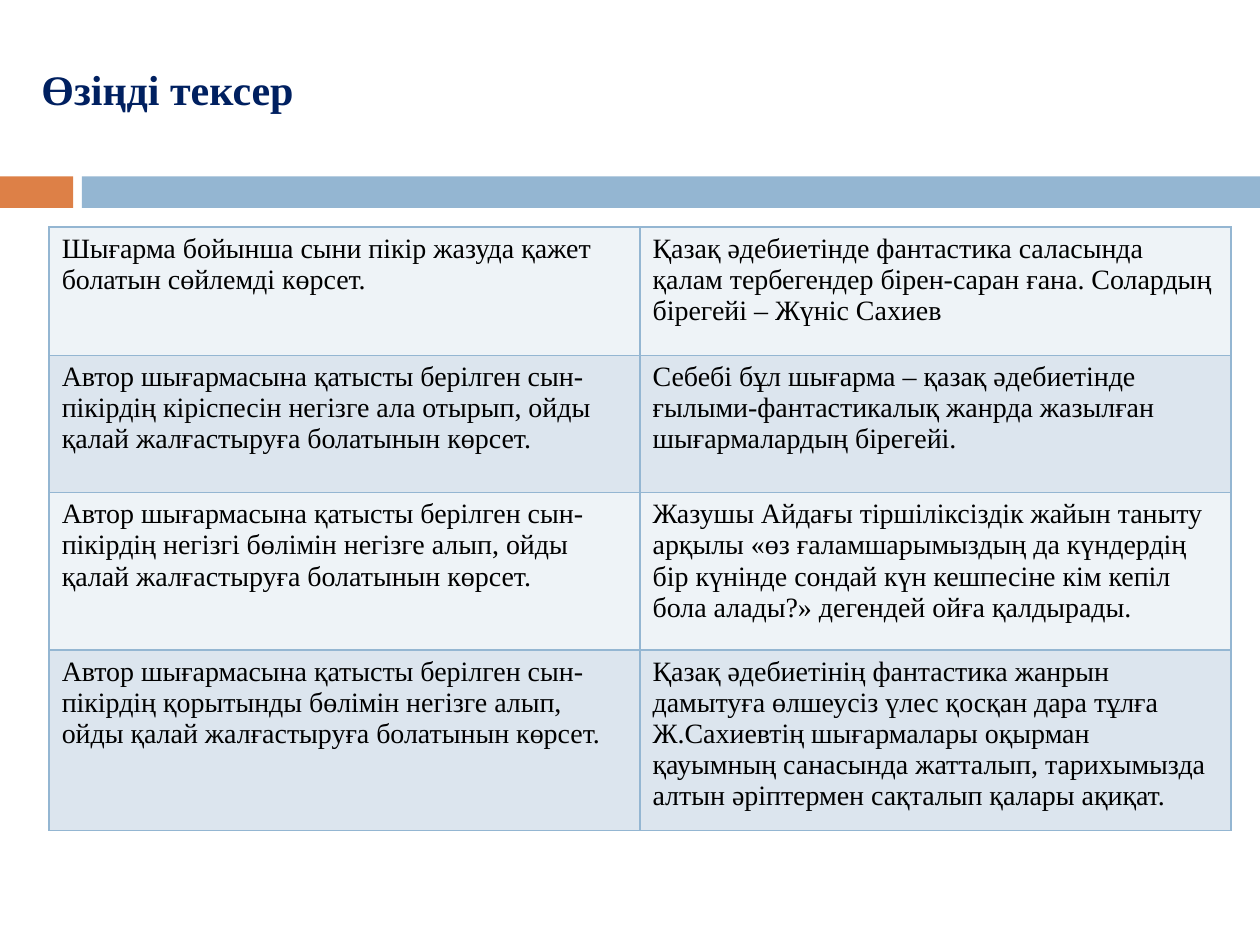
from dataclasses import dataclass

from lxml import etree
from pptx import Presentation
from pptx import util as u
from pptx.dml.color import RGBColor
from pptx.enum import shapes, text
from pptx.oxml import ns

FONT = "Times New Roman"
ACCENT = "94B6D2"
BAND_FILLS = ("EEF3F7", "DCE5EE")


@dataclass
class Bar:
    left: float
    width: float
    fill: str


@dataclass
class Answer:
    task: str
    reply: str
    height: float


BARS = [Bar(0, 0.58, "DD8047"), Bar(0.65, 9.35, ACCENT)]

ANSWERS = [
    Answer(
        "Шығарма бойынша сыни пікір жазуда қажет болатын сөйлемді көрсет.",
        "Қазақ әдебиетінде фантастика саласында қалам тербегендер бірен-саран ғана. "
        "Солардың бірегейі – Жүніс Сахиев",
        1.02,
    ),
    Answer(
        "Автор шығармасына қатысты берілген сын-пікірдің кіріспесін негізге ала отырып, "
        "ойды қалай жалғастыруға болатынын көрсет.",
        "Себебі бұл шығарма – қазақ әдебиетінде ғылыми-фантастикалық жанрда жазылған "
        "шығармалардың бірегейі.",
        1.09,
    ),
    Answer(
        "Автор шығармасына қатысты берілген сын-пікірдің негізгі бөлімін негізге алып, "
        "ойды қалай жалғастыруға болатынын көрсет.",
        "Жазушы Айдағы тіршіліксіздік жайын таныту арқылы «өз ғаламшарымыздың да "
        "күндердің бір күнінде сондай күн кешпесіне кім кепіл бола алады?» дегендей "
        "ойға қалдырады.",
        1.25,
    ),
    Answer(
        "Автор шығармасына қатысты берілген сын-пікірдің қорытынды бөлімін негізге алып, "
        "ойды қалай жалғастыруға болатынын көрсет.",
        "Қазақ әдебиетінің фантастика жанрын дамытуға өлшеусіз үлес қосқан дара тұлға "
        "Ж.Сахиевтің шығармалары оқырман қауымның санасында жатталып, тарихымызда алтын "
        "әріптермен сақталып қалары ақиқат.",
        1.25,
    ),
]


def paint(fill, color: str) -> None:
    fill.solid()
    fill.fore_color.rgb = RGBColor.from_string(color)


def style(paragraph, size: float, color: str, bold: bool = False) -> None:
    font = paragraph.font
    font.name, font.size, font.bold = FONT, u.Pt(size), bold
    paint(font.fill, color)


def draw_bar(slide, bar: Bar) -> None:
    strip = slide.shapes.add_shape(
        shapes.MSO_SHAPE.RECTANGLE,
        u.Inches(bar.left), u.Inches(1.4), u.Inches(bar.width), u.Inches(0.25),
    )
    strip.shadow.inherit = False
    paint(strip.fill, bar.fill)
    strip.line.fill.background()


def draw_title(slide, words: str) -> None:
    title = slide.shapes.add_textbox(
        u.Inches(0.23), u.Inches(0.16), u.Inches(8.92), u.Inches(1.08)
    )
    frame = title.text_frame
    frame.word_wrap = True
    frame.vertical_anchor = text.MSO_ANCHOR.MIDDLE
    frame.text = words
    style(frame.paragraphs[0], 24, "002060", bold=True)


def add_borders(cell, color: str) -> None:
    properties = cell._tc.get_or_add_tcPr()
    for side in ("a:lnL", "a:lnR", "a:lnT", "a:lnB"):
        edge = etree.SubElement(properties, ns.qn(side), w=str(u.Pt(1)))
        solid = etree.SubElement(edge, ns.qn("a:solidFill"))
        etree.SubElement(solid, ns.qn("a:srgbClr"), val=color)


def draw_answers(slide, answers: list[Answer]) -> None:
    total = sum(answer.height for answer in answers)
    table = slide.shapes.add_table(
        len(answers), 2, u.Inches(0.39), u.Inches(1.8), u.Inches(9.38), u.Inches(total)
    ).table
    table.first_row = False
    table.horz_banding = False
    for index, answer in enumerate(answers):
        table.rows[index].height = u.Inches(answer.height)
        for column, words in enumerate((answer.task, answer.reply)):
            cell = table.cell(index, column)
            cell.text = words
            style(cell.text_frame.paragraphs[0], 16, "000000")
            add_borders(cell, ACCENT)
            paint(cell.fill, BAND_FILLS[index % 2])


def main() -> None:
    deck = Presentation()
    deck.slide_width, deck.slide_height = u.Inches(10), u.Inches(7.5)
    slide = deck.slides.add_slide(deck.slide_layouts[6])
    for bar in BARS:
        draw_bar(slide, bar)
    draw_title(slide, "Өзіңді тексер")
    draw_answers(slide, ANSWERS)
    deck.save("out.pptx")


if __name__ == "__main__":
    main()
